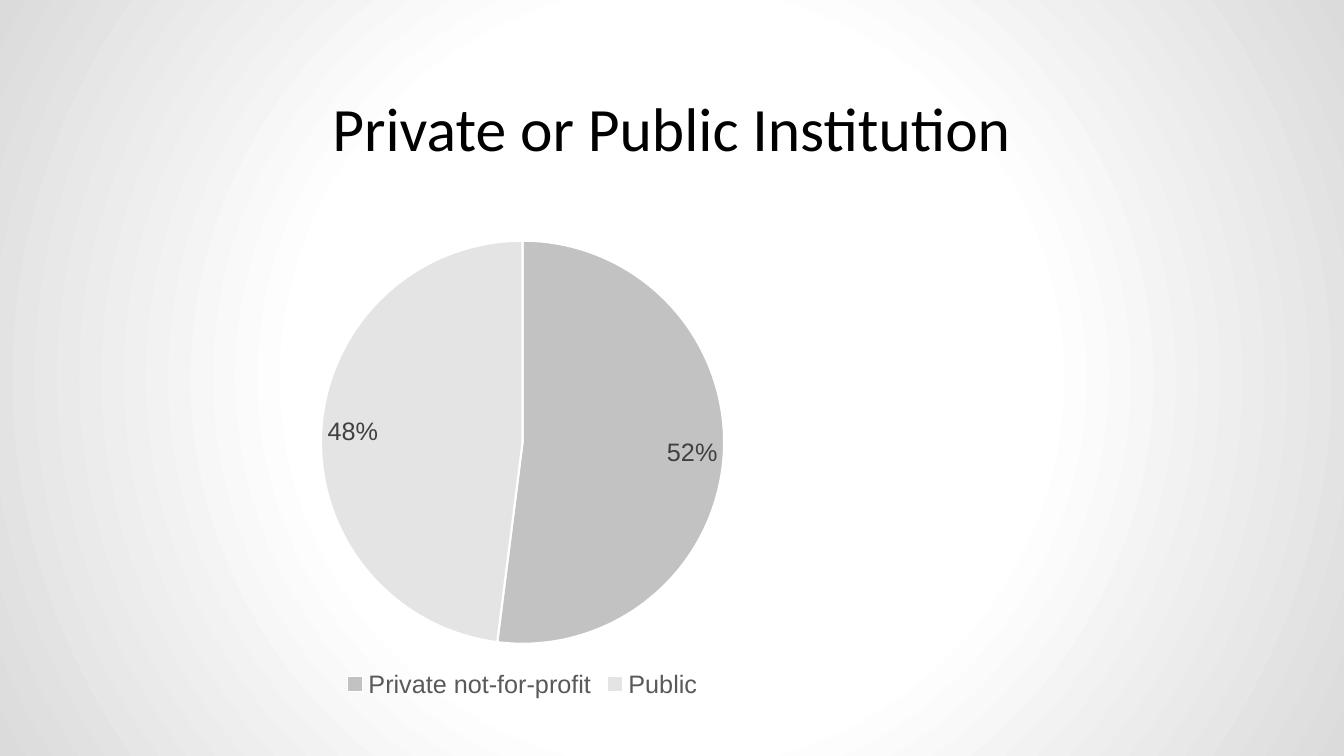
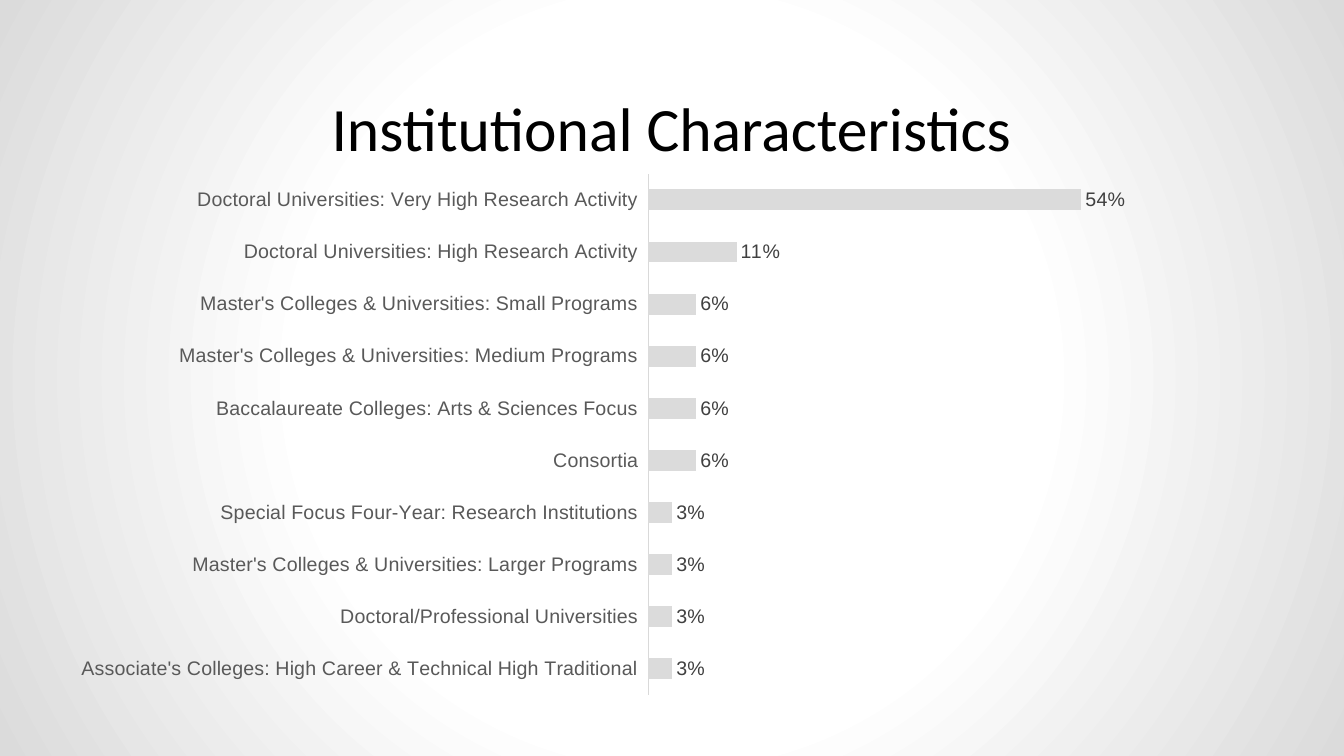
"""Build two slides that chart the type and characteristics of institutions."""
from lxml import etree
from pptx import Presentation
from pptx.chart.data import CategoryChartData
from pptx.dml.color import RGBColor
from pptx.enum.chart import XL_CHART_TYPE, XL_LABEL_POSITION, XL_LEGEND_POSITION, XL_TICK_LABEL_POSITION, XL_TICK_MARK
from pptx.enum.text import MSO_ANCHOR, MSO_AUTO_SIZE, PP_ALIGN
from pptx.util import Pt

PIE, BAR = XL_CHART_TYPE.PIE, XL_CHART_TYPE.BAR_CLUSTERED
BEST_FIT, OUTSIDE_END = XL_LABEL_POSITION.BEST_FIT, XL_LABEL_POSITION.OUTSIDE_END
LEGEND_BOTTOM = XL_LEGEND_POSITION.BOTTOM
NO_TICK, LABELS_LOW = XL_TICK_MARK.NONE, XL_TICK_LABEL_POSITION.LOW
TOP, NO_FIT, CENTER = MSO_ANCHOR.TOP, MSO_AUTO_SIZE.NONE, PP_ALIGN.CENTER

COLORS = {
    "title": "000000",
    "label": "404040",
    "axis_text": "595959",
    "axis_line": "D9D9D9",
    "private": "C2C2C2",
    "public": "E4E4E4",
    "bar": "DBDBDB",
    "center": "FFFFFF",
    "edge": "DBDBDB",
}
TITLE_FONT, CHART_FONT = "Calibri", "Arial"
TITLE_ONLY = 5
INSET = Pt(7.2)

SECTORS = {"Private not-for-profit": 0.52, "Public": 0.48}
CHARACTERISTICS = {
    "Associate's Colleges: High Career & Technical High Traditional": 0.03,
    "Doctoral/Professional Universities": 0.03,
    "Master's Colleges & Universities: Larger Programs": 0.03,
    "Special Focus Four-Year: Research Institutions": 0.03,
    "Consortia": 0.06,
    "Baccalaureate Colleges: Arts & Sciences Focus": 0.06,
    "Master's Colleges & Universities: Medium Programs": 0.06,
    "Master's Colleges & Universities: Small Programs": 0.06,
    "Doctoral Universities: High Research Activity": 0.11,
    "Doctoral Universities: Very High Research Activity": 0.54,
}


def style_font(font, name, size, color):
    font.name = name
    font.size = Pt(size)
    font.color.rgb = RGBColor.from_string(COLORS[color])


def add_chart_slide(title_text, chart_type, values, box, size, label_position):
    slide = presentation.slides.add_slide(presentation.slide_layouts[TITLE_ONLY])
    title = slide.shapes.title
    title.left, title.top, title.width, title.height = Pt(75.6), Pt(57), Pt(808.5), Pt(60.5)
    frame = title.text_frame
    frame.text = title_text
    frame.auto_size = NO_FIT
    frame.vertical_anchor = TOP
    frame.margin_left = frame.margin_right = frame.margin_top = frame.margin_bottom = INSET
    paragraph = frame.paragraphs[0]
    paragraph.alignment = CENTER
    style_font(paragraph.runs[0].font, TITLE_FONT, 44, "title")

    data = CategoryChartData(number_format="0%")
    data.categories = list(values)
    data.add_series("Series 1", list(values.values()))
    chart = slide.shapes.add_chart(chart_type, *[Pt(length) for length in box], data).chart
    chart.has_title = False
    chart.has_legend = False
    style_font(chart.font, CHART_FONT, size, "title")
    plot = chart.plots[0]
    plot.vary_by_categories = chart_type == PIE
    plot.has_data_labels = True
    labels = plot.data_labels
    labels.show_value = True
    labels.show_percentage = False
    labels.number_format = "0%"
    labels.number_format_is_linked = False
    labels.position = label_position
    style_font(labels.font, CHART_FONT, size, "label")
    return chart


presentation = Presentation()
presentation.slide_width, presentation.slide_height = Pt(960), Pt(540)

master = presentation.slide_master
master.background.fill.solid()
background = master.element.xpath("p:cSld/p:bg/p:bgPr")[0]
stops = "".join(
    f'<a:gs pos="{position * 1000}"><a:srgbClr val="{COLORS[color]}"/></a:gs>'
    for position, color in ((0, "center"), (48, "center"), (100, "edge"))
)
background.replace(background[0], etree.fromstring(
    '<a:gradFill xmlns:a="http://schemas.openxmlformats.org/drawingml/2006/main" rotWithShape="1">'
    f"<a:gsLst>{stops}</a:gsLst>"
    '<a:path path="circle"><a:fillToRect l="50000" t="50000" r="50000" b="50000"/></a:path>'
    "</a:gradFill>"
))

pie_chart = add_chart_slide(
    "Private or Public Institution", PIE, SECTORS, (88.5, 162, 569.5, 340.5), 18, BEST_FIT
)
pie_chart.has_legend = True
pie_chart.legend.position = LEGEND_BOTTOM
pie_chart.legend.include_in_layout = False
style_font(pie_chart.legend.font, CHART_FONT, 18, "axis_text")
for index, color in enumerate(("private", "public")):
    slice_format = pie_chart.series[0].points[index].format
    slice_format.fill.solid()
    slice_format.fill.fore_color.rgb = RGBColor.from_string(COLORS[color])
    slice_format.line.color.rgb = RGBColor.from_string(COLORS["center"])
    slice_format.line.width = Pt(1.5)

bar_chart = add_chart_slide(
    "Institutional Characteristics", BAR, CHARACTERISTICS, (42.5, 116.5, 780, 387.5), 14, OUTSIDE_END
)
bar_plot = bar_chart.plots[0]
bar_plot.gap_width = 150
bar_plot.overlap = -25
bar_fill = bar_chart.series[0].format.fill
bar_fill.solid()
bar_fill.fore_color.rgb = RGBColor.from_string(COLORS["bar"])

category_axis = bar_chart.category_axis
category_axis.major_tick_mark = category_axis.minor_tick_mark = NO_TICK
category_axis.tick_label_position = LABELS_LOW
category_axis.has_major_gridlines = False
category_axis.format.line.color.rgb = RGBColor.from_string(COLORS["axis_line"])
category_axis.format.line.width = Pt(0.75)
style_font(category_axis.tick_labels.font, CHART_FONT, 14, "axis_text")

value_axis = bar_chart.value_axis
value_axis.has_major_gridlines = False
value_axis.minimum_scale, value_axis.maximum_scale = 0, 0.6
value_axis.visible = False

presentation.save("out.pptx")
